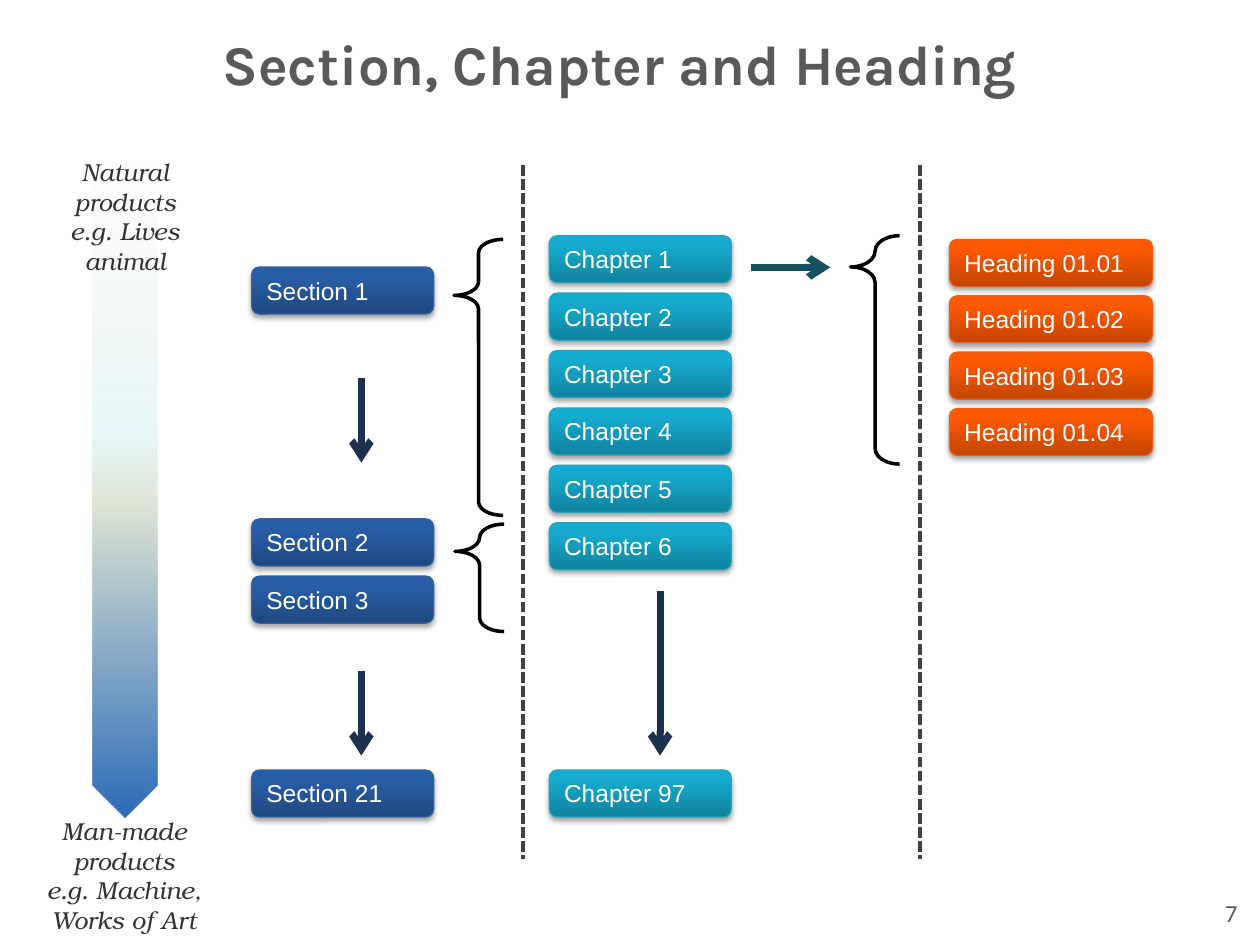
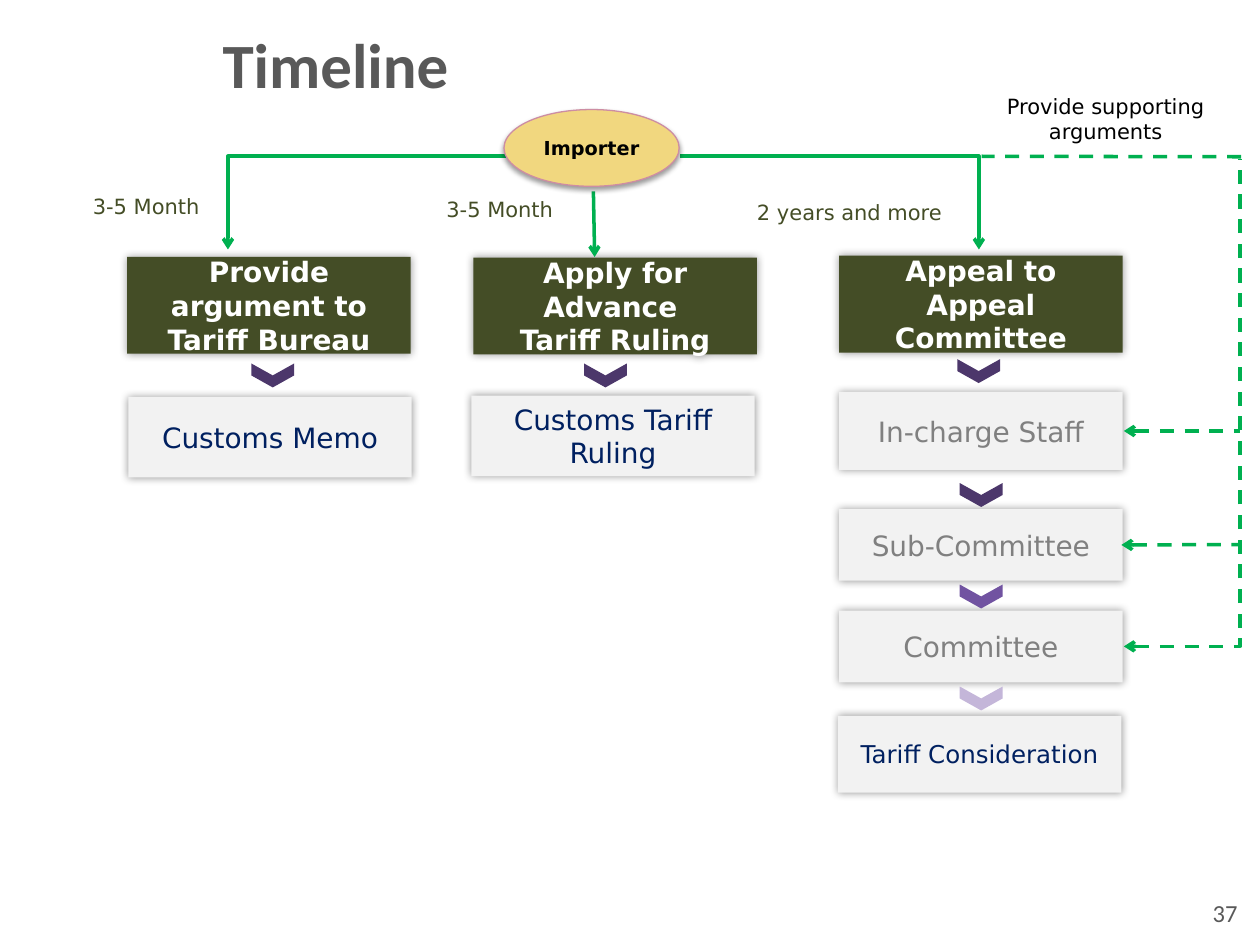
import dataclasses
import typing

import lxml.etree
import pptx
import pptx.dml.color
import pptx.enum.dml
import pptx.enum.shapes
import pptx.enum.text
import pptx.oxml.ns
import pptx.shapes.autoshape
import pptx.shapes.base
import pptx.slide
import pptx.util

SHAPE = pptx.enum.shapes.MSO_SHAPE
ALIGN = pptx.enum.text.PP_ALIGN
ANCHOR = pptx.enum.text.MSO_ANCHOR
DASH = pptx.enum.dml.MSO_LINE

TITLE_GREY = "595959"
WHITE = "FFFFFF"
BLACK = "000000"
NAVY = "1C314E"
GREEN = "00B050"
OLIVE = "444D26"
PALE_GREY = "F2F2F2"
MID_GREY = "808080"
INK_BLUE = "002060"
DARK_PURPLE = "4C376B"


@dataclasses.dataclass(frozen=True)
class TextStyle:
    font: str
    size: float
    color: str
    bold: bool = False
    italic: bool = False
    align: ALIGN = ALIGN.LEFT
    anchor: ANCHOR = ANCHOR.TOP


@dataclasses.dataclass(frozen=True)
class Stop:
    position: int
    color: str
    alpha: int = 100


@dataclasses.dataclass(frozen=True)
class Shadow:
    alpha: int
    blur: float
    distance: float


@dataclasses.dataclass(frozen=True)
class Palette:
    dark: str
    light: str
    top: str
    edge: str

    def stops(self) -> list[Stop]:
        return [Stop(0, self.dark), Stop(80, self.light), Stop(100, self.top)]


@dataclasses.dataclass(frozen=True)
class Frame:
    left: float
    top: float
    width: float
    height: float

    def lengths(self) -> list[pptx.util.Length]:
        return [pptx.util.Pt(value) for value in dataclasses.astuple(self)]


@dataclasses.dataclass(frozen=True)
class Link:
    start: tuple[float, float]
    end: tuple[float, float]
    color: str = GREEN
    weight: float = 2
    dash: typing.Optional[DASH] = None
    arrow_at: str = ""
    bent: bool = False


@dataclasses.dataclass(frozen=True)
class Card:
    text: str
    frame: Frame
    fill: str
    style: TextStyle


BLUE_BAR = Palette("1F4880", "295EA7", "265EAA", "35609C")
TEAL_BAR = Palette("11839F", "16AACE", "13ADD3", "28A1BE")
ORANGE_BAR = Palette("C44500", "FE5900", "FF5A00", "EB6015")

BAR_SHADOW = Shadow(35, 3.1, 1.8)
CARD_SHADOW = Shadow(40, 5, 0)

BAR_TEXT = TextStyle("Arial", 14, WHITE)
PAGE_NUMBER = TextStyle("Calibri", 14, TITLE_GREY, align=ALIGN.RIGHT)
SCALE_TEXT = TextStyle("TeX Gyre Bonum", 14, "333333", italic=True, align=ALIGN.CENTER)
STEP_HEAD = TextStyle("DejaVu Sans", 16, WHITE, True, align=ALIGN.CENTER, anchor=ANCHOR.MIDDLE)
RESULT = dataclasses.replace(STEP_HEAD, color=INK_BLUE, bold=False)
REVIEWER = dataclasses.replace(RESULT, color=MID_GREY)
FINAL_RESULT = dataclasses.replace(RESULT, size=14)
IMPORTER = dataclasses.replace(STEP_HEAD, size=11, color=BLACK)
DURATION = TextStyle("DejaVu Sans", 12, OLIVE)
ARGUMENT_NOTE = TextStyle("DejaVu Sans", 12, BLACK, align=ALIGN.CENTER)


def rgb(value: str) -> pptx.dml.color.RGBColor:
    return pptx.dml.color.RGBColor.from_string(value)


def add_element(parent: typing.Any, tag: str, **attributes: typing.Any) -> typing.Any:
    texts = {name: str(value) for name, value in attributes.items()}
    return lxml.etree.SubElement(parent, pptx.oxml.ns.qn(tag), texts)


def add_color(parent: typing.Any, color: str, alpha: int) -> None:
    element = add_element(parent, "a:srgbClr", val=color)
    if alpha < 100:
        add_element(element, "a:alpha", val=alpha * 1000)


def write_text(box: pptx.shapes.base.BaseShape, lines: list[str], style: TextStyle) -> None:
    frame = box.text_frame
    frame.word_wrap = True
    frame.vertical_anchor = style.anchor
    formats = {
        "name": style.font,
        "size": pptx.util.Pt(style.size),
        "bold": style.bold,
        "italic": style.italic,
    }
    for index, line in enumerate(lines):
        para = frame.add_paragraph() if index else frame.paragraphs[0]
        para.text = line
        para.alignment = style.align
        for span in para.runs:
            for name, value in formats.items():
                setattr(span.font, name, value)
            span.font.color.rgb = rgb(style.color)


def add_label(page: pptx.slide.Slide, lines: list[str], frame: Frame, style: TextStyle) -> None:
    write_text(page.shapes.add_textbox(*frame.lengths()), lines, style)


def add_figure(
    page: pptx.slide.Slide,
    kind: SHAPE,
    frame: Frame,
    fill: typing.Union[str, list[Stop], None] = None,
    edge: str = "",
    weight: float = 0.75,
    shadow: typing.Optional[Shadow] = None,
    angle: int = 90,
    rotation: int = 0,
    adjustments: tuple[float, ...] = (),
) -> pptx.shapes.autoshape.Shape:
    figure = page.shapes.add_shape(kind, *frame.lengths())
    figure.rotation = rotation
    for index, value in enumerate(adjustments):
        figure.adjustments[index] = value
    properties = figure._element.spPr
    if fill is None:
        figure.fill.background()
    elif isinstance(fill, str):
        figure.fill.solid()
        figure.fill.fore_color.rgb = rgb(fill)
    else:
        figure.fill.gradient()
        figure.fill.gradient_angle = angle
        stop_list = properties.find(".//" + pptx.oxml.ns.qn("a:gsLst"))
        stop_list.clear()
        for stop in fill:
            element = add_element(stop_list, "a:gs", pos=stop.position * 1000)
            add_color(element, stop.color, stop.alpha)
    if edge:
        figure.line.color.rgb = rgb(edge)
        figure.line.width = pptx.util.Pt(weight)
    else:
        figure.line.fill.background()
    figure.shadow.inherit = False
    if shadow:
        effects = properties.find(pptx.oxml.ns.qn("a:effectLst"))
        blur, distance = pptx.util.Pt(shadow.blur), pptx.util.Pt(shadow.distance)
        outer = add_element(effects, "a:outerShdw", blurRad=blur, dist=distance, dir=5400000, rotWithShape=0)
        add_color(outer, BLACK, shadow.alpha)
    return figure


def add_link(page: pptx.slide.Slide, link: Link) -> None:
    kinds = pptx.enum.shapes.MSO_CONNECTOR
    kind = kinds.ELBOW if link.bent else kinds.STRAIGHT
    ends = [pptx.util.Pt(value) for value in link.start + link.end]
    connector = page.shapes.add_connector(kind, *ends)
    properties = connector._element.spPr
    if link.bent:
        properties.find(pptx.oxml.ns.qn("a:prstGeom")).set("prst", "bentConnector2")
    connector.line.color.rgb = rgb(link.color)
    connector.line.width = pptx.util.Pt(link.weight)
    if link.dash:
        connector.line.dash_style = link.dash
    if link.arrow_at:
        add_element(connector.line._get_or_add_ln(), f"a:{link.arrow_at}End", type="arrow")
    add_element(properties, "a:effectLst")


def add_bar(page: pptx.slide.Slide, text: str, frame: Frame, palette: Palette) -> None:
    bar = add_figure(page, SHAPE.ROUNDED_RECTANGLE, frame, palette.stops(), palette.edge, shadow=BAR_SHADOW)
    write_text(bar, [text], BAR_TEXT)


def add_page(deck: typing.Any, title: str, font: str, size: float, number: int) -> pptx.slide.Slide:
    page = deck.slides.add_slide(deck.slide_layouts[5])
    heading = page.shapes.title
    for name, value in zip(("left", "top", "width", "height"), Frame(120, 0, 600, 72).lengths()):
        setattr(heading, name, value)
    write_text(heading, [title], TextStyle(font, size, TITLE_GREY, True, anchor=ANCHOR.MIDDLE))
    heading.text_frame.auto_size = pptx.enum.text.MSO_AUTO_SIZE.NONE
    add_label(page, [str(number)], Frame(612, 509.8, 102.2, 30.2), PAGE_NUMBER)
    return page


def build_structure(deck: typing.Any) -> None:
    page = add_page(deck, "Section, Chapter and Heading", "Karla", 32, 7)
    scale = [Stop(0, "2D6BB8"), Stop(48, "DDE5D4"), Stop(59, "E8F8FA"), Stop(100, "EEF2EA", 0)]
    add_figure(page, SHAPE.PENTAGON, Frame(-115.2, 262.1, 373, 36.9), scale,
               angle=180, rotation=90, adjustments=(0.506,))

    bar_height = 26.9
    for number, top in ((1, 152.6), (2, 296.5), (3, 329.2), (21, 440)):
        add_bar(page, f"Section {number}", Frame(143.8, top, 104, bar_height), BLUE_BAR)
    chapters = [(number, 134.7 + 32.8 * (number - 1)) for number in range(1, 7)]
    for number, top in chapters + [(97, 440)]:
        add_bar(page, f"Chapter {number}", Frame(313.9, top, 104, bar_height), TEAL_BAR)
    for index in range(4):
        frame = Frame(542.6, 136.8 + 32.2 * index, 116, bar_height)
        add_bar(page, f"Heading 01.{index + 1:02}", frame, ORANGE_BAR)

    braces = (
        (Frame(486, 134.7, 28.1, 130.5), (0.316, 0.137)),
        (Frame(259.4, 136.8, 28.1, 157.7), (0.273, 0.203)),
        (Frame(260, 299.5, 28.1, 61.4), (0.287, 0.254)),
    )
    for frame, curve in braces:
        add_figure(page, SHAPE.LEFT_BRACE, frame, edge=BLACK, weight=2, adjustments=curve)

    for x, top, bottom in ((206.5, 216, 264.4), (206.5, 383.3, 431.8), (377.2, 337.8, 431.8)):
        add_link(page, Link((x, top), (x, bottom), NAVY, 4, arrow_at="tail"))
    add_link(page, Link((429.1, 152.8), (474.5, 152.8), "175160", 4, arrow_at="tail"))
    for x in (299, 525.6):
        add_link(page, Link((x, 94.3), (x, 491), "404040", dash=DASH.SQUARE_DOT))

    add_label(page, ["Natural products", "e.g. Lives animal"], Frame(12.2, 86.4, 118.8, 41), SCALE_TEXT)
    add_label(page, ["Man-made products", "e.g. Machine, Works of Art"],
              Frame(2.9, 463, 136.1, 74.9), SCALE_TEXT)


def build_timeline(deck: typing.Any) -> None:
    page = add_page(deck, "Timeline", "Calibri", 36, 37)
    width = 162
    cards = (
        Card("Appeal to Appeal Committee", Frame(479.5, 146.1, width, 55.4), OLIVE, STEP_HEAD),
        Card("Provide argument to Tariff Bureau", Frame(72.7, 146.8, width, 55.4), OLIVE, STEP_HEAD),
        Card("Apply for Advance \vTariff Ruling", Frame(270.5, 147.2, width, 55.4), OLIVE, STEP_HEAD),
        Card("Customs Memo", Frame(73.3, 226.8, width, 46.1), PALE_GREY, RESULT),
        Card("Customs Tariff Ruling", Frame(269.3, 226.1, width, 46.1), PALE_GREY, RESULT),
        Card("In-charge Staff", Frame(479.5, 223.9, width, 44.6), PALE_GREY, REVIEWER),
        Card("Sub-Committee", Frame(479.5, 290.9, width, 41), PALE_GREY, REVIEWER),
        Card("Committee", Frame(479.5, 349, width, 41), PALE_GREY, REVIEWER),
        Card("Tariff Consideration", Frame(478.8, 409, width, 43.9), PALE_GREY, FINAL_RESULT),
    )
    links = (
        Link((388.8, 89.3), (559.4, 142.6), arrow_at="tail", bent=True),
        Link((301, 89.3), (130.3, 142.6), arrow_at="tail", bent=True),
        Link((339.8, 146.9), (339.1, 109.4), arrow_at="head"),
        Link((642.2, 369.4), (708.5, 90.7), dash=DASH.DASH, arrow_at="head", bent=True),
        Link((709.2, 89.6), (560.9, 89.3), dash=DASH.DASH),
        Link((640.8, 311.4), (708.5, 311.2), dash=DASH.DASH, arrow_at="head"),
        Link((642.2, 246.3), (708.5, 246.3), dash=DASH.DASH, arrow_at="head"),
    )
    chevrons = (
        (552.4, 199.8, DARK_PURPLE),
        (149, 202.3, DARK_PURPLE),
        (339.1, 202.3, DARK_PURPLE),
        (553.8, 270.6, DARK_PURPLE),
        (553.8, 328.6, "7153A1"),
        (553.8, 386.9, "C4B6D9"),
    )
    labels = (
        ("Provide supporting arguments", 545.8, 49.7, 172.1, ARGUMENT_NOTE),
        ("2 years and more", 425.5, 110.5, 132.5, DURATION),
        ("3-5 Month", 46, 107.3, 88.6, DURATION),
        ("3-5 Month", 248, 108.9, 78.5, DURATION),
    )
    for card in cards:
        figure = add_figure(page, SHAPE.RECTANGLE, card.frame, card.fill, shadow=CARD_SHADOW)
        write_text(figure, [card.text], card.style)
    for link in links:
        add_link(page, link)
    for left, top, color in chevrons:
        add_figure(page, SHAPE.CHEVRON, Frame(left, top, 13.7, 24.5), color, rotation=90)
    for text, left, top, label_width, style in labels:
        add_label(page, [text], Frame(left, top, label_width, 21.6), style)
    importer = add_figure(page, SHAPE.OVAL, Frame(288, 62.6, 100.1, 43.9), "F1D77F", "CD8DA3",
                          shadow=Shadow(38, 3.1, 1.6))
    write_text(importer, ["Importer"], IMPORTER)


def main() -> None:
    deck = pptx.Presentation()
    deck.slide_width = pptx.util.Pt(720)
    deck.slide_height = pptx.util.Pt(540)
    build_structure(deck)
    build_timeline(deck)
    deck.save("out.pptx")


if __name__ == "__main__":
    main()
